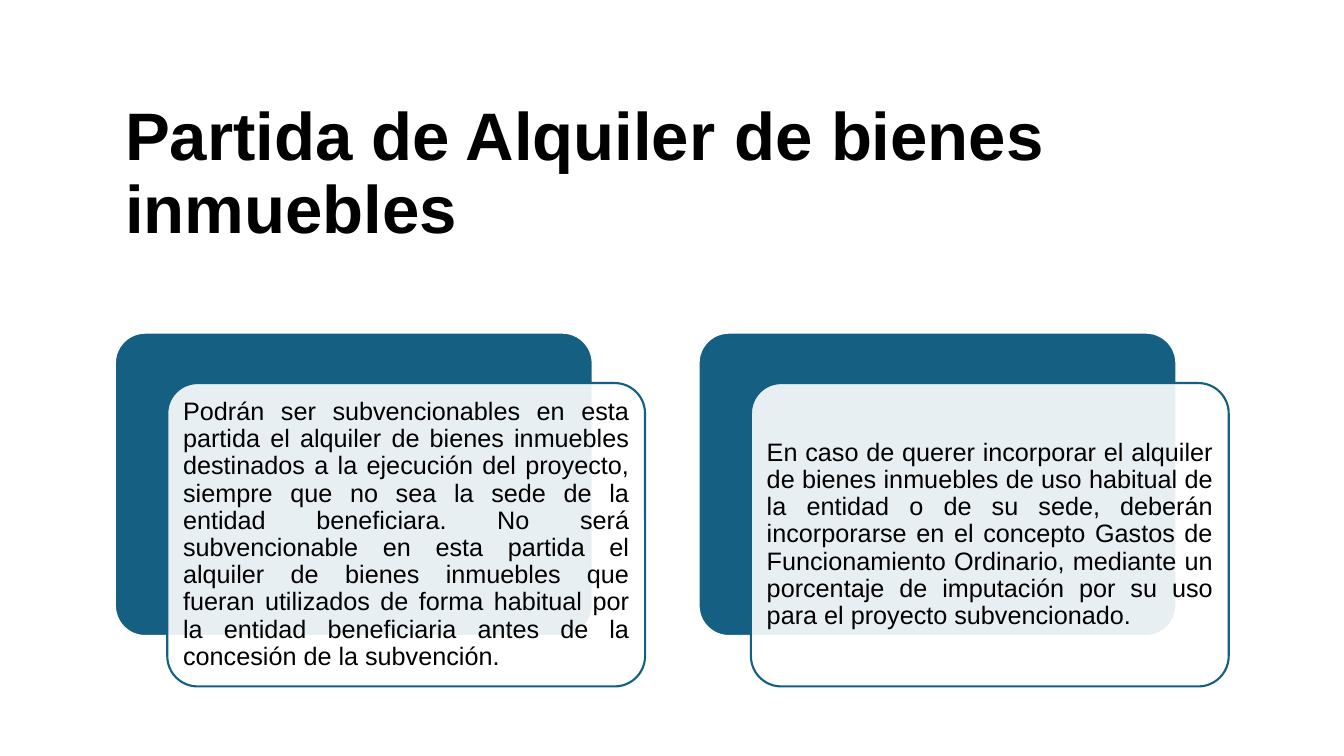
from pptx import Presentation
from pptx.dml.color import RGBColor
from pptx.enum.shapes import MSO_SHAPE as Shape
from pptx.enum.text import MSO_ANCHOR as Anchor, PP_ALIGN as Align
from pptx.oxml.ns import qn
from pptx.util import Pt
from lxml.etree import SubElement

BLUE = RGBColor(0x15, 0x60, 0x82)
WHITE = RGBColor(0xFF, 0xFF, 0xFF)
BLACK = RGBColor(0, 0, 0)

CARD_LEFT, CARD_TOP = 82.1, 237.6
CARD_WIDTH, CARD_HEIGHT = 341.3, 216.7
CARD_PITCH = 416.9
FRONT_SHIFT_X, FRONT_SHIFT_Y = 37.4, 36
TEXT_INSET = Pt(5)

TITLE = "Partida de Alquiler de bienes inmuebles"
CARD_TEXTS = [
    "Podrán ser subvencionables en esta partida el alquiler de bienes inmuebles "
    "destinados a la ejecución del proyecto, siempre que no sea la sede de la "
    "entidad beneficiara. No será subvencionable en esta partida el alquiler de "
    "bienes inmuebles que fueran utilizados de forma habitual por la entidad "
    "beneficiaria antes de la concesión de la subvención.",
    "En caso de querer incorporar el alquiler de bienes inmuebles de uso habitual "
    "de la entidad o de su sede, deberán incorporarse en el concepto Gastos de "
    "Funcionamiento Ordinario, mediante un porcentaje de imputación por su uso "
    "para el proyecto subvencionado.",
]


def set_attributes(target, values):
    for name, value in values.items():
        setattr(target, name, value)


def write_text(shape, text, size, bold, align, frame_format):
    frame = shape.text_frame
    frame.text = text
    set_attributes(frame, {"word_wrap": True, "vertical_anchor": Anchor.MIDDLE,
                           **frame_format})
    paragraph = frame.paragraphs[0]
    set_attributes(paragraph, {"alignment": align, "line_spacing": 0.9})
    font = paragraph.runs[0].font
    set_attributes(font, {"name": "Arial", "size": Pt(size), "bold": bold})
    font.color.rgb = BLACK


def add_title(slide):
    title = slide.shapes.title
    set_attributes(title, {"left": Pt(82.1), "top": Pt(64.1),
                           "width": Pt(801.4), "height": Pt(122.4)})
    write_text(title, TITLE, 48, True, Align.LEFT, {})


def add_panel(slide, left, top, fill, line):
    panel = slide.shapes.add_shape(Shape.ROUNDED_RECTANGLE, Pt(left), Pt(top),
                                   Pt(CARD_WIDTH), Pt(CARD_HEIGHT))
    panel.adjustments[0] = 0.1
    panel.shadow.inherit = False
    panel.fill.solid()
    panel.fill.fore_color.rgb = fill
    panel.line.color.rgb = line
    panel.line.width = Pt(1.5)
    return panel


def set_opacity(shape, percent):
    color = shape.fill._xPr.find(qn("a:solidFill"))[0]
    SubElement(color, qn("a:alpha"), val=str(percent * 1000))


def add_card(slide, left, text):
    add_panel(slide, left, CARD_TOP, BLUE, WHITE)
    front = add_panel(slide, left + FRONT_SHIFT_X, CARD_TOP + FRONT_SHIFT_Y,
                      WHITE, BLUE)
    set_opacity(front, 90)
    insets = {f"margin_{side}": TEXT_INSET
              for side in ("left", "top", "right", "bottom")}
    write_text(front, text, 18, False, Align.JUSTIFY, insets)


def main():
    presentation = Presentation()
    set_attributes(presentation, {"slide_width": Pt(960), "slide_height": Pt(540)})
    slide = presentation.slides.add_slide(presentation.slide_layouts[5])

    # Heading
    add_title(slide)

    # Two cards, each a blue panel with a translucent text panel in front
    for index, text in enumerate(CARD_TEXTS):
        add_card(slide, CARD_LEFT + index * CARD_PITCH, text)

    presentation.save("out.pptx")


if __name__ == "__main__":
    main()
